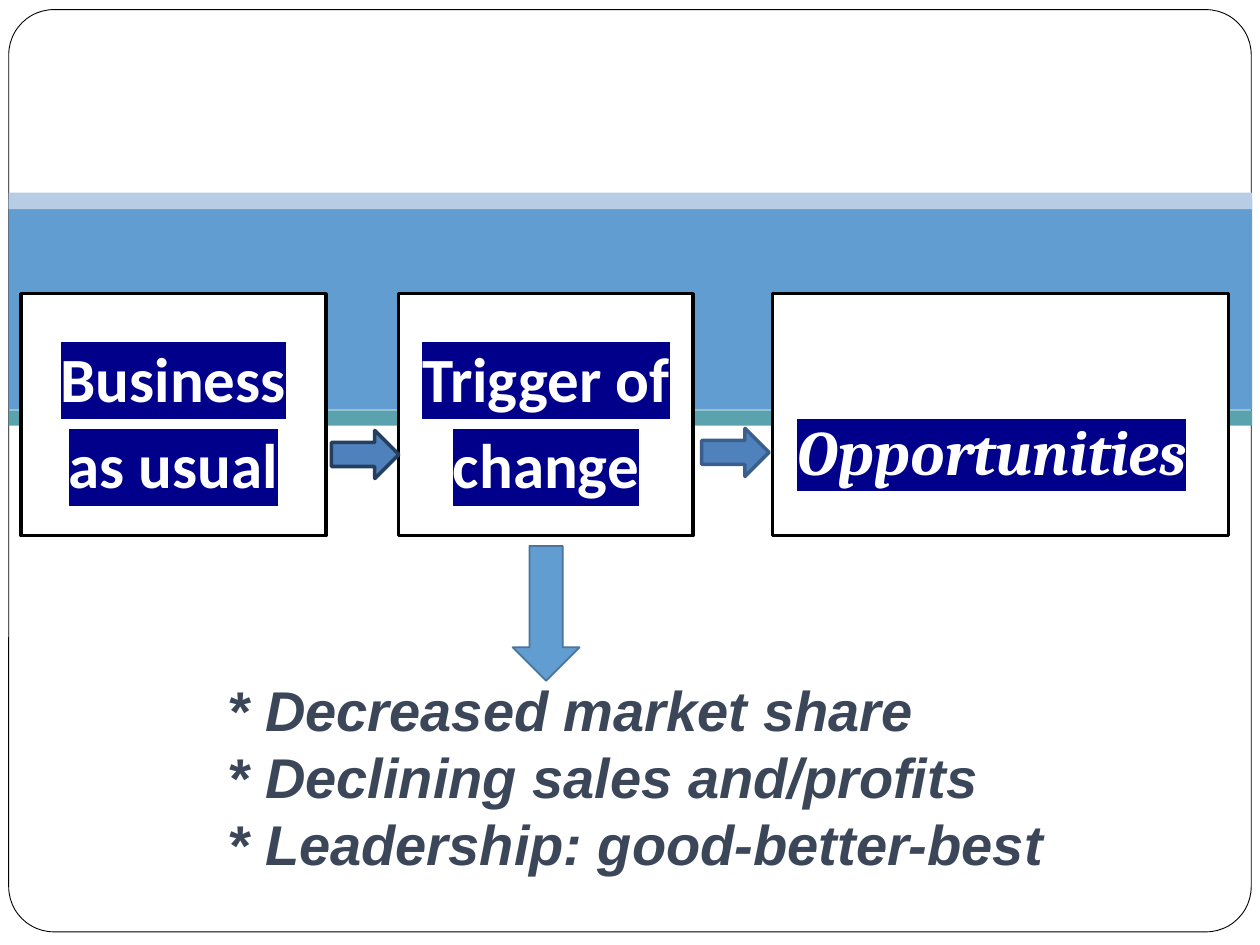
import dataclasses

import pptx
import pptx.dml.color
import pptx.enum.shapes
import pptx.enum.text
import pptx.util
from lxml import etree
from pptx.oxml.ns import qn

Pt = pptx.util.Pt
Kind = pptx.enum.shapes.MSO_SHAPE
Align = pptx.enum.text.PP_ALIGN
Anchor = pptx.enum.text.MSO_ANCHOR

WHITE, BLACK, NAVY = "FFFFFF", "000000", "00008B"
SLATE = "3B4759"


@dataclasses.dataclass
class Part:
    """A filled shape; lengths in points."""
    kind: int
    left: float
    top: float
    width: float
    height: float
    fill: str
    line: str = ""
    weight: float = 0


@dataclasses.dataclass
class Label:
    """Highlighted text inside a box."""
    text: str
    face: str = "Calibri"
    italic: bool = False
    anchor: int = Anchor.MIDDLE
    after: float = 10
    right: float = 7.2
    bottom: float = 3.6


def color(code: str) -> pptx.dml.color.RGBColor:
    return pptx.dml.color.RGBColor.from_string(code)


def draw(slide, part: Part):
    shape = slide.shapes.add_shape(
        part.kind, Pt(part.left), Pt(part.top), Pt(part.width), Pt(part.height))
    shape.shadow.inherit = False
    shape.fill.solid()
    shape.fill.fore_color.rgb = color(part.fill)
    if part.line:
        shape.line.color.rgb = color(part.line)
        shape.line.width = Pt(part.weight)
    else:
        shape.line.fill.background()
    return shape


def style(para, face: str, size: float, code: str, italic: bool) -> None:
    font = para.font
    font.name, font.size = face, Pt(size)
    font.bold, font.italic = True, italic
    font.color.rgb = color(code)


def mark(run, code: str) -> None:
    """Put a highlight behind a run."""
    light = etree.SubElement(run.font._element, qn("a:highlight"))
    etree.SubElement(light, qn("a:srgbClr"), val=code)


def write(shape, label: Label) -> None:
    frame = shape.text_frame
    frame.word_wrap = True
    frame.vertical_anchor = label.anchor
    frame.margin_right, frame.margin_bottom = Pt(label.right), Pt(label.bottom)
    para = frame.paragraphs[0]
    para.alignment = Align.CENTER
    para.line_spacing = 1.15
    para.space_after = Pt(label.after)
    style(para, label.face, 36, WHITE, label.italic)
    run = para.add_run()
    run.text = label.text
    mark(run, NAVY)


def box(kind: int, left: float, width: float) -> Part:
    return Part(kind, left, 167.8, width, 138.2, WHITE, BLACK, 2)


def band(top: float, height: float, fill: str) -> Part:
    return Part(Kind.RECTANGLE, 5, top, 710.6, height, fill)


def main() -> None:
    deck = pptx.Presentation()
    deck.slide_width, deck.slide_height = Pt(720), Pt(540)
    slide = deck.slides.add_slide(deck.slide_layouts[6])

    # Frame and coloured bands
    frame = draw(slide, Part(Kind.ROUNDED_RECTANGLE, 5, 5.5, 710, 527,
                             WHITE, BLACK, 0.5))
    frame.adjustments[0] = 0.049
    for part in (band(114, 120.2, "629DD1"), band(110, 9.5, "B7CCE5"),
                 band(234.5, 8.8, "5AA2AE")):
        draw(slide, part)

    # Three stages
    stages = (
        (box(Kind.FLOWCHART_PROCESS, 12, 174.2), Label("Business as usual")),
        (box(Kind.RECTANGLE, 227.7, 168.5), Label("Trigger of change")),
        (box(Kind.RECTANGLE, 441.4, 260.6),
         Label("Opportunities", "Cambria", True, Anchor.BOTTOM, 0, 17, 27)),
    )
    for part, label in stages:
        write(draw(slide, part), label)

    # Arrows between the stages
    for left, top, line in ((189.4, 246, "243F60"), (401, 244.8, "3A5F8C")):
        draw(slide, Part(Kind.RIGHT_ARROW, left, top, 38.5, 27.5,
                         "4F81BD", line, 2))

    # Triggers
    note = slide.shapes.add_textbox(Pt(123.1), Pt(382.3), Pt(493.2), Pt(123.8))
    note.text_frame.word_wrap = True
    note.text_frame.text = "\n".join((
        "* Decreased market share",
        "* Declining sales and/profits",
        "* Leadership: good-better-best"))
    for para in note.text_frame.paragraphs:
        style(para, "Arial", 32, SLATE, True)
    draw(slide, Part(Kind.DOWN_ARROW, 293, 312, 38.2, 77, "629DD1", "49749B", 1))

    deck.save("out.pptx")


if __name__ == "__main__":
    main()
